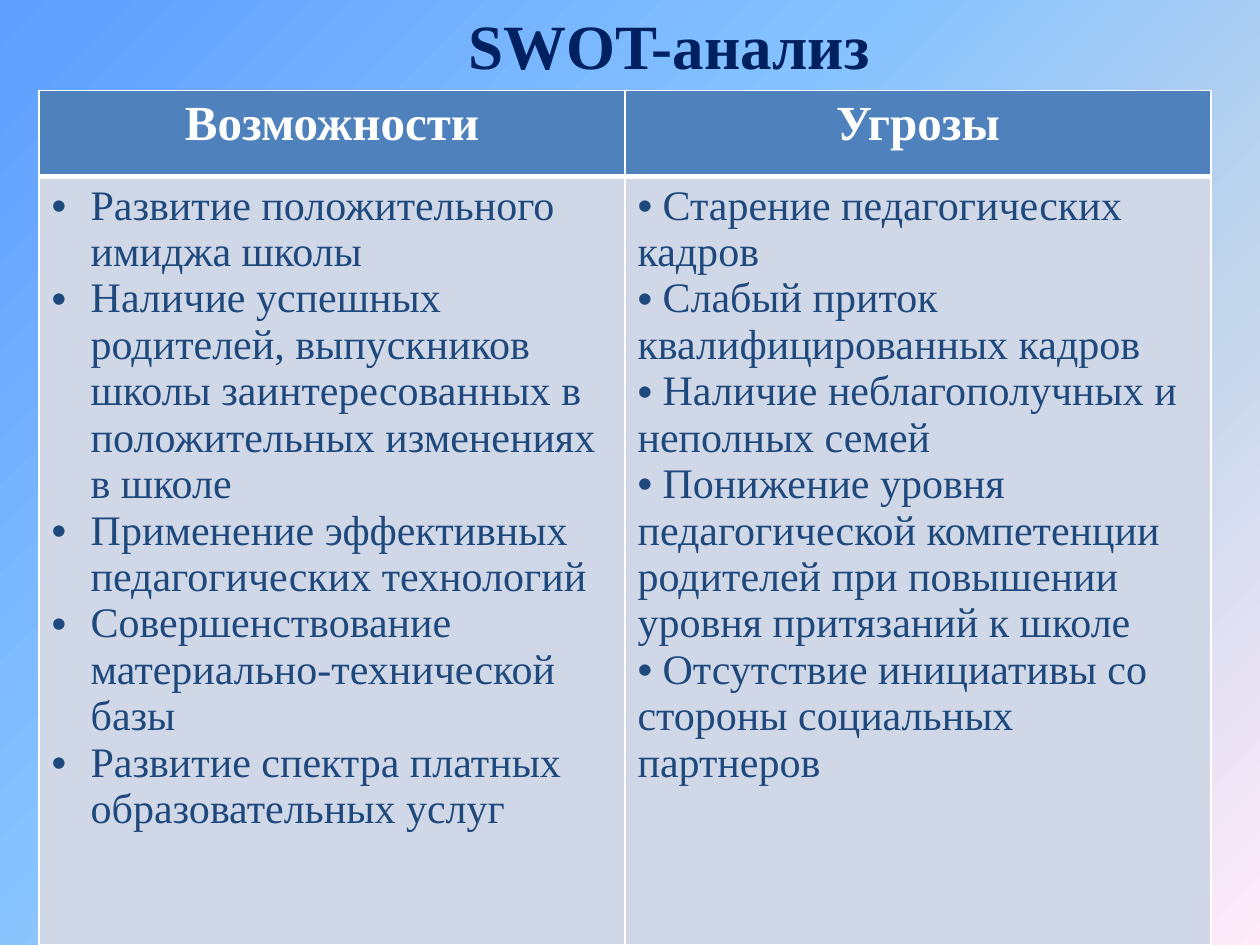
from dataclasses import dataclass

from lxml import etree
from pptx import Presentation
from pptx.dml.color import RGBColor
from pptx.enum.text import MSO_ANCHOR, PP_ALIGN
from pptx.oxml.ns import qn
from pptx.util import Inches, Pt

CENTER, LEFT = PP_ALIGN.CENTER, PP_ALIGN.LEFT
MIDDLE = MSO_ANCHOR.MIDDLE


@dataclass(frozen=True)
class Theme:
    font: str = "Times New Roman"
    title: str = "002060"
    white: str = "FFFFFF"
    text: str = "1F497D"
    head: str = "4F81BD"
    body: str = "D0D8E8"
    title_size: int = 36
    head_size: int = 28
    body_size: int = 24
    thin: int = 1
    thick: int = 3
    stops: tuple = ((0, "5E9EFF"), (40, "85C2FF"), (70, "C4D6EB"), (100, "FFEBFA"))


THEME = Theme()

HEADS = ["Возможности", "Угрозы"]
LISTS = [
    [
        "Развитие положительного имиджа школы",
        "Наличие успешных родителей, выпускников школы заинтересованных "
        "в положительных изменениях в школе",
        "Применение эффективных педагогических технологий",
        "Совершенствование материально-технической базы",
        "Развитие спектра платных образовательных услуг",
    ],
    [
        " Старение педагогических кадров",
        " Слабый приток квалифицированных кадров",
        " Наличие неблагополучных и неполных семей",
        " Понижение уровня педагогической компетенции родителей "
        "при повышении уровня притязаний к школе",
        " Отсутствие инициативы со стороны социальных партнеров",
    ],
]
HANGS = [0.31, 0]


def add_node(parent, tag, **attrs):
    return etree.SubElement(parent, qn(tag), {k: str(v) for k, v in attrs.items()})


def paint_back(slide):
    fill = slide.background.fill
    fill.gradient()
    fill.gradient_angle = 315
    stops = slide.element.find(".//" + qn("a:gsLst"))
    for stop in list(stops):
        stops.remove(stop)
    for place, color in THEME.stops:
        stop = add_node(stops, "a:gs", pos=place * 1000)
        add_node(stop, "a:srgbClr", val=color)


def style_text(para, size, color, bold, align):
    para.alignment = align
    font = para.font
    font.name, font.size, font.bold = THEME.font, Pt(size), bold
    font.color.rgb = RGBColor.from_string(color)


def add_title(slide, text):
    title = slide.shapes.title
    title.left, title.top = Inches(2.89), Inches(0)
    title.width, title.height = Inches(4.84), Inches(0.71)
    frame = title.text_frame
    frame.text = text
    frame.vertical_anchor = MIDDLE
    style_text(frame.paragraphs[0], THEME.title_size, THEME.title, True, CENTER)


def style_cell(cell, color, top, bottom):
    props = cell._tc.get_or_add_tcPr()
    sides = {"L": THEME.thin, "R": THEME.thin, "T": top, "B": bottom}
    for side, width in sides.items():
        line = add_node(props, "a:ln" + side, w=Pt(width))
        fill = add_node(line, "a:solidFill")
        add_node(fill, "a:srgbClr", val=THEME.white)
    cell.fill.solid()
    cell.fill.fore_color.rgb = RGBColor.from_string(color)


def add_bullet(para, hang):
    props = para._p.get_or_add_pPr()
    props.set("marL", str(Inches(hang)))
    props.set("indent", str(-Inches(hang)))
    mark = etree.Element(qn("a:buFont"), typeface="Arial")
    props.insert(0, mark)
    mark.addnext(etree.Element(qn("a:buChar"), char="•"))


def fill_head(cell, text):
    style_cell(cell, THEME.head, THEME.thin, THEME.thick)
    cell.text = text
    para = cell.text_frame.paragraphs[0]
    style_text(para, THEME.head_size, THEME.white, True, CENTER)


def fill_list(cell, items, hang):
    style_cell(cell, THEME.body, THEME.thick, THEME.thin)
    cell.text = "\n".join(items)
    for para in cell.text_frame.paragraphs:
        style_text(para, THEME.body_size, THEME.text, False, LEFT)
        add_bullet(para, hang)


def add_grid(slide):
    frame = slide.shapes.add_table(
        2, len(HEADS), Inches(0.31), Inches(0.72), Inches(9.3), Inches(6.78)
    )
    table = frame.table
    table.rows[0].height, table.rows[1].height = Inches(0.68), Inches(6.1)
    for col, (head, items, hang) in enumerate(zip(HEADS, LISTS, HANGS)):
        fill_head(table.cell(0, col), head)
        fill_list(table.cell(1, col), items, hang)


def main():
    deck = Presentation()
    deck.slide_width, deck.slide_height = Inches(10), Inches(7.5)
    slide = deck.slides.add_slide(deck.slide_layouts[5])
    paint_back(slide)
    add_title(slide, "SWOT-анализ")
    add_grid(slide)
    deck.save("out.pptx")


if __name__ == "__main__":
    main()
